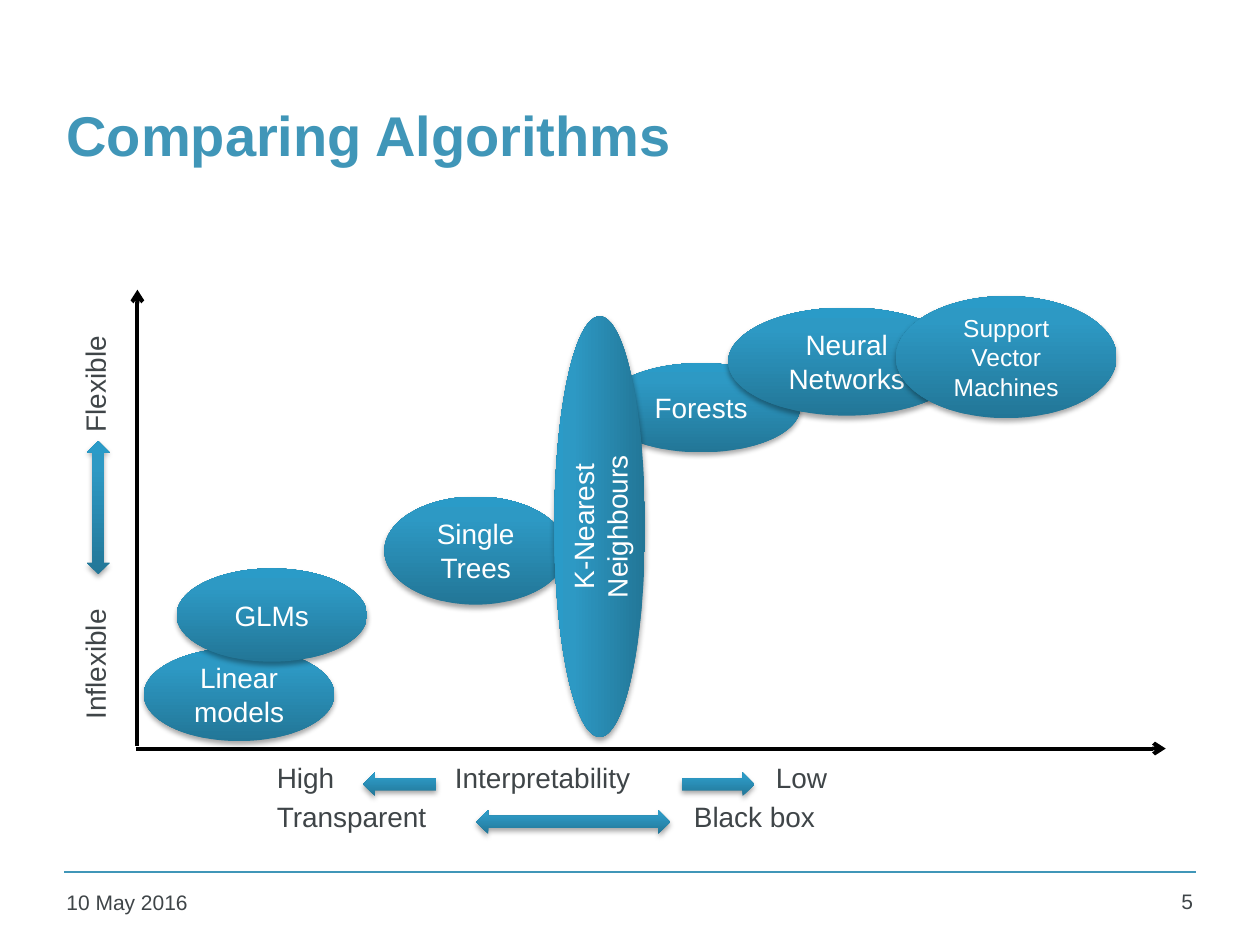
from pptx import Presentation
from pptx.dml.color import RGBColor
from pptx.enum.shapes import MSO_CONNECTOR, MSO_SHAPE as SHAPE
from pptx.enum.text import MSO_ANCHOR as ANCHOR, PP_ALIGN as ALIGN
from pptx.oxml import parse_xml
from pptx.oxml.ns import nsdecls
from pptx.oxml.xmlchemy import OxmlElement
from pptx.util import Cm, Pt

FONT = "Arial"
COLORS = {
    "accent": "4096B8", "text": "3F4548", "axis": "000000", "label": "FFFFFF",
    "dark": "227697", "mid": "2D99C4", "light": "2A9BC8", "shadow": "000000",
}

# Content: boxes are (left, top, width, height) in cm
TITLE = ("Comparing Algorithms", (1.09, 1.12, 23.04, 3.18))
DATE = ("10 May 2016", (1.09, 17.81, 5.59, 0.91))
PAGE = ("5", (22.5, 17.78, 1.8, 0.94))

# Algorithms, back to front: lines, box, text size, rotation
ALGORITHMS = [
    (["Forests"], (12.14, 7.32, 3.99, 1.8), 16, 0),
    (["Linear models"], (2.9, 13.06, 3.84, 1.88), 16, 0),
    (["Neural Networks"], (14.68, 6.2, 4.78, 2.18), 16, 0),
    (["Single Trees"], (7.75, 10.01, 3.68, 2.18), 16, 0),
    (["Support", "Vector", "Machines"], (18.06, 5.97, 4.45, 2.46), 14, 0),
    (["K-Nearest Neighbours"], (7.85, 9.7, 8.48, 1.83), 16, 270),
    (["GLMs"], (3.56, 11.46, 3.84, 1.88), 16, 0),
]

# Axis captions: text, left, top, width, rotation
CAPTION_HEIGHT = 1.09
CAPTIONS = [
    ("High", 5.33, 15.21, 2.34, 0),
    ("Interpretability", 8.92, 15.21, 5.05, 0),
    ("Low", 15.39, 15.21, 6.15, 0),
    ("Transparent", 5.33, 16, 5.23, 0),
    ("Black box", 13.74, 16, 6.15, 0),
    ("Inflexible", 0.15, 12.37, 3.68, 270),
    ("Flexible", 0.15, 6.58, 3.68, 270),
]
SCALE_ARROWS = [
    (SHAPE.LEFT_ARROW, (7.32, 15.57, 1.47, 0.48)),
    (SHAPE.RIGHT_ARROW, (13.74, 15.57, 1.47, 0.48)),
    (SHAPE.LEFT_RIGHT_ARROW, (9.6, 16.33, 3.91, 0.48)),
    (SHAPE.UP_DOWN_ARROW, (1.75, 8.89, 0.46, 2.69)),
]

# Lines: start x, start y, end x, end y
FOOTER_RULE = (1.3, 17.58, 24.1, 17.58)
AXES = [(2.77, 15.04, 2.77, 5.84), (2.74, 15.09, 23.5, 15.09)]


def cm(values):
    return [Cm(value) for value in values]


def write(shape, lines, size, color, align=ALIGN.LEFT, anchor=ANCHOR.TOP, bold=False):
    frame = shape.text_frame
    frame.word_wrap = True
    frame.vertical_anchor = anchor
    for i, line in enumerate(lines):
        paragraph = frame.add_paragraph() if i else frame.paragraphs[0]
        paragraph.alignment = align
        run = paragraph.add_run()
        run.text = line
        font = run.font
        font.name, font.size, font.bold = FONT, Pt(size), bold
        font.color.rgb = RGBColor.from_string(COLORS[color])


def add_text(slide, text, box, size, color="text", rotation=0, **style):
    textbox = slide.shapes.add_textbox(*cm(box))
    textbox.rotation = rotation
    write(textbox, [text], size, color, **style)


def add_glossy(slide, kind, box, rotation=0):
    """Add a shape with the blue gradient and a soft shadow below it."""
    shape = slide.shapes.add_shape(kind, *cm(box))
    shape.rotation = rotation
    shape.line.fill.background()
    shape.shadow.inherit = False
    stops = "".join(
        f'<a:gs pos="{pos}"><a:srgbClr val="{COLORS[name]}"/></a:gs>'
        for pos, name in [(0, "dark"), (80000, "mid"), (100000, "light")])
    properties = shape._element.spPr
    properties.find("{*}ln").addprevious(parse_xml(
        f'<a:gradFill {nsdecls("a")} rotWithShape="1"><a:gsLst>{stops}</a:gsLst>'
        '<a:lin ang="16200000" scaled="0"/></a:gradFill>'))
    properties.find("{*}effectLst").append(parse_xml(
        f'<a:outerShdw {nsdecls("a")} blurRad="{Pt(3.1)}" dist="{Pt(1.8)}" '
        f'dir="5400000" rotWithShape="0"><a:srgbClr val="{COLORS["shadow"]}">'
        '<a:alpha val="35000"/></a:srgbClr></a:outerShdw>'))
    return shape


def add_line(slide, ends, color, width, arrow=False):
    line = slide.shapes.add_connector(MSO_CONNECTOR.STRAIGHT, *cm(ends))
    line.line.color.rgb = RGBColor.from_string(COLORS[color])
    line.line.width = Pt(width)
    if arrow:
        head = OxmlElement("a:tailEnd")
        head.set("type", "arrow")
        line.line._get_or_add_ln().append(head)
    line._element.spPr.append(OxmlElement("a:effectLst"))


def main():
    prs = Presentation()
    prs.slide_width, prs.slide_height = cm((25.4, 19.05))
    slide = prs.slides.add_slide(prs.slide_layouts[6])

    # Title and footer
    add_line(slide, FOOTER_RULE, "accent", 1)
    add_text(slide, *TITLE, 32, "accent", anchor=ANCHOR.MIDDLE, bold=True)
    add_text(slide, *DATE, 12)
    add_text(slide, *PAGE, 12, align=ALIGN.RIGHT)

    # Algorithms
    for lines, box, size, rotation in ALGORITHMS:
        ellipse = add_glossy(slide, SHAPE.OVAL, box, rotation)
        write(ellipse, lines, size, "label", ALIGN.CENTER, ANCHOR.MIDDLE)

    # Axes with their captions
    for axis in AXES:
        add_line(slide, axis, "axis", 2.25, arrow=True)
    for text, left, top, width, rotation in CAPTIONS:
        add_text(slide, text, (left, top, width, CAPTION_HEIGHT), 16, rotation=rotation)
    for kind, box in SCALE_ARROWS:
        add_glossy(slide, kind, box)

    prs.save("out.pptx")


if __name__ == "__main__":
    main()
